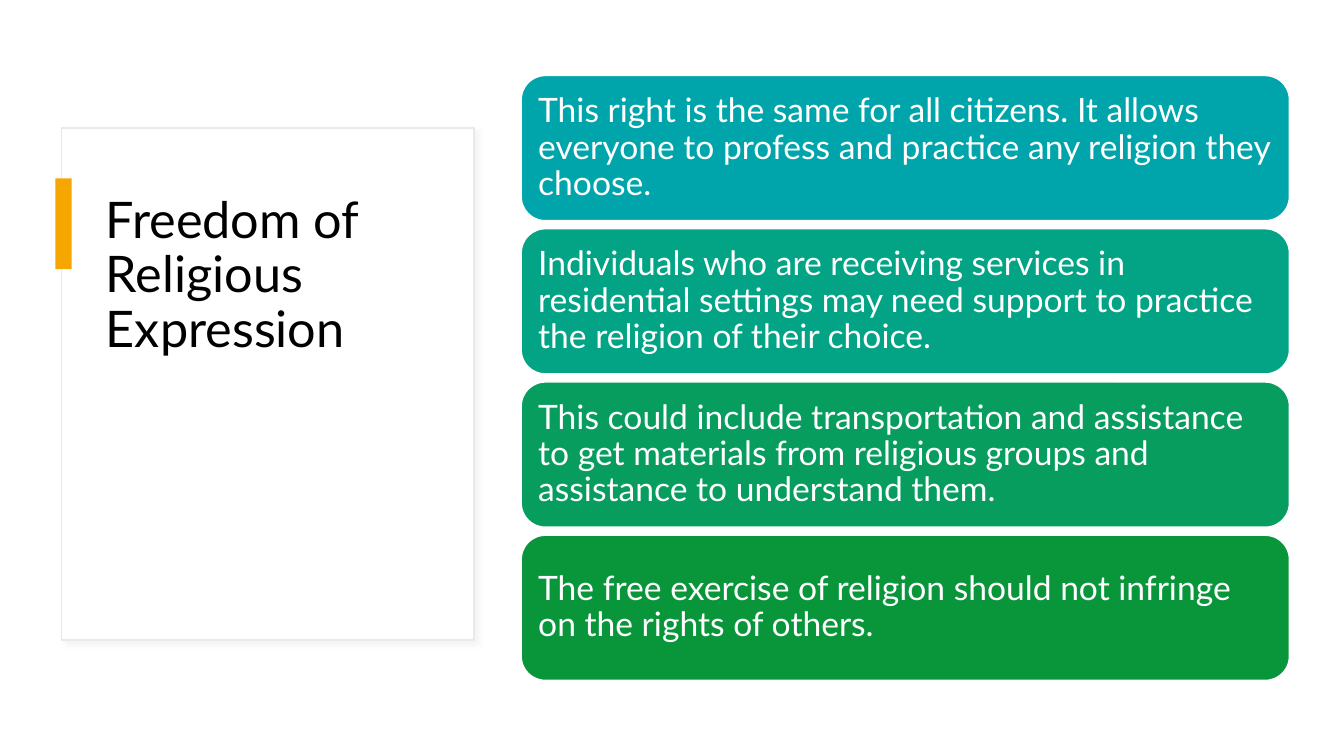
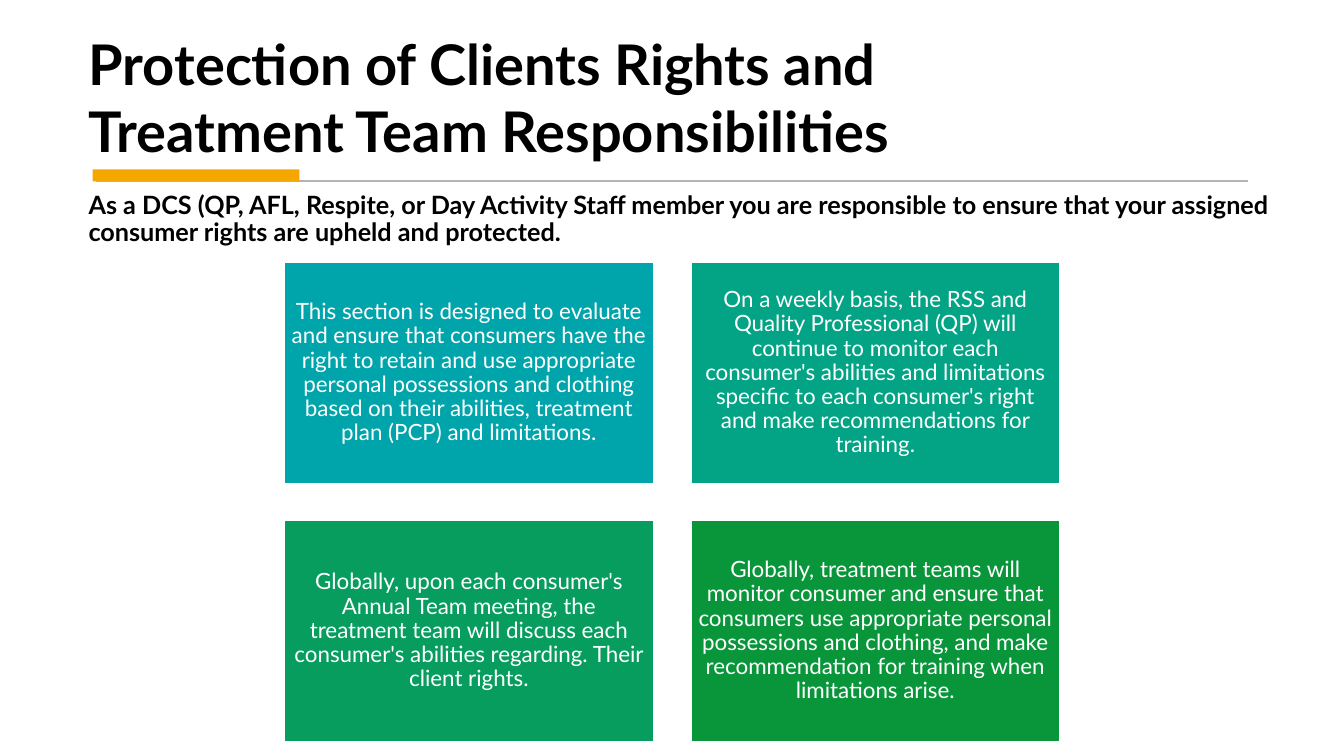
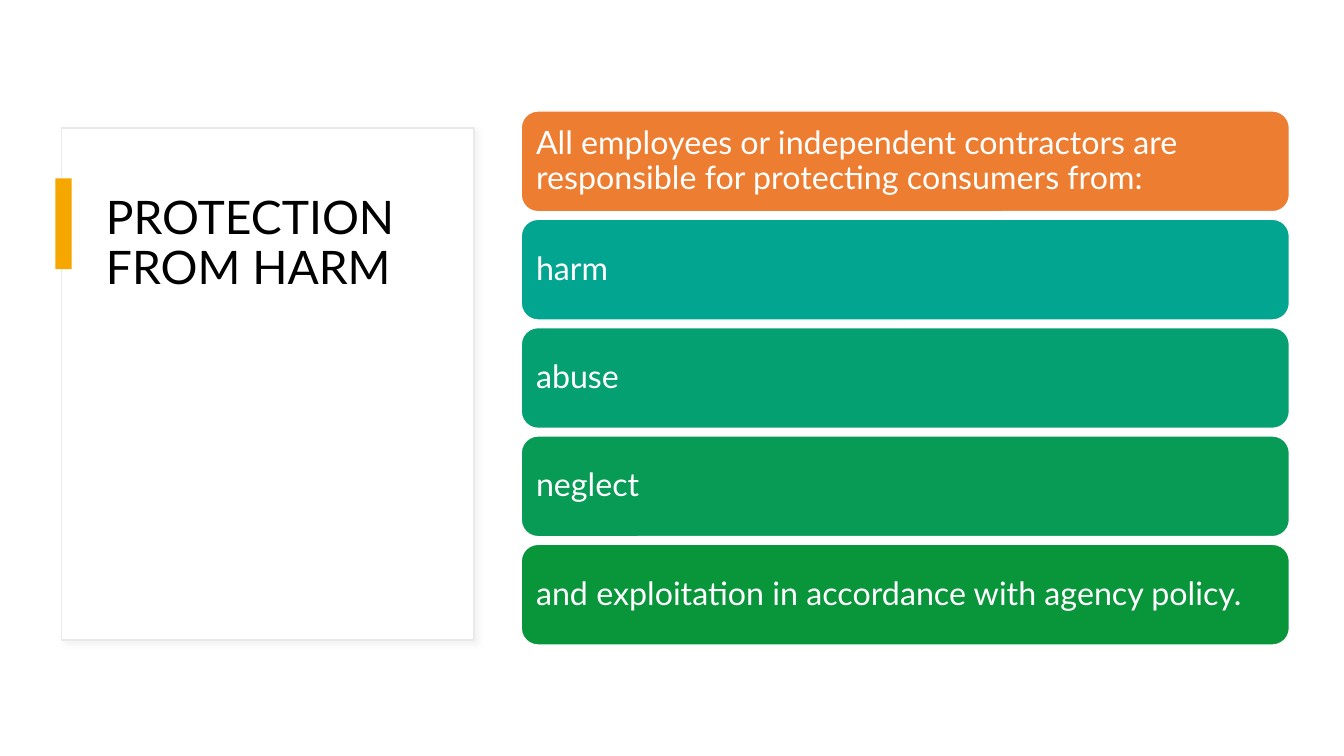
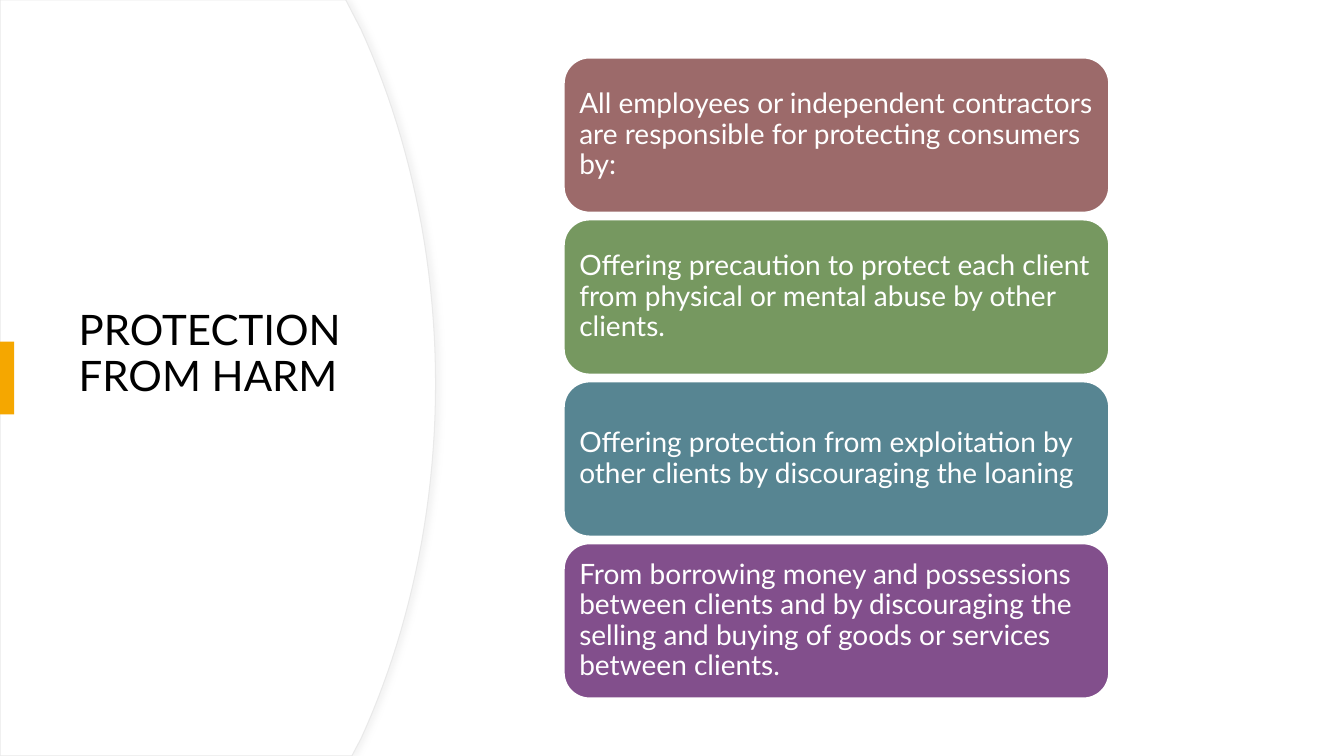
from lxml import etree
from pptx import Presentation
from pptx.dml.color import RGBColor
from pptx.enum.shapes import MSO_CONNECTOR as CONNECTOR, MSO_SHAPE as SHAPE
from pptx.enum.text import MSO_ANCHOR as ANCHOR, MSO_AUTO_SIZE as FIT, PP_ALIGN as ALIGN
from pptx.oxml.ns import qn
from pptx.util import Inches, Pt

# Shared look
FONT = "Lato"
BLACK, WHITE, ACCENT, EDGE, RULE = "000000", "FFFFFF", "F5A700", "E9E9E9", "B4B4B4"
TEAL_TO_GREEN = ["00A5AB", "03A485", "069D5E", "09963B"]

deck = Presentation()
deck.slide_width, deck.slide_height = Inches(13.33), Inches(7.5)
title_only = deck.slide_layouts[5]

# Grid of 100 columns and 100 rows; a place is column, row, columns, rows
COL, ROW = deck.slide_width / 100, deck.slide_height / 100


def dress(shape, place=None, fill=None, line=None, width=1, shadow_angle=None):
    """Place a shape, colour it, and give it a soft shadow or none."""
    if place:
        col, row, cols, rows = place
        shape.left, shape.top = int(col * COL), int(row * ROW)
        shape.width, shape.height = int(cols * COL), int(rows * ROW)
    if fill:
        shape.fill.solid()
        shape.fill.fore_color.rgb = RGBColor.from_string(fill)
    if line:
        shape.line.color.rgb = RGBColor.from_string(line)
        shape.line.width = Pt(width)
    elif fill:
        shape.line.fill.background()
    effects = etree.SubElement(shape.element.spPr, qn("a:effectLst"))
    if shadow_angle is not None:
        shadow = etree.SubElement(effects, qn("a:outerShdw"), blurRad=str(Pt(4)),
                                  dist=str(Pt(3)), dir=str(shadow_angle * 60000))
        color = etree.SubElement(shadow, qn("a:srgbClr"), val="D9D9D9")
        etree.SubElement(color, qn("a:alpha"), val="30000")
    return shape


def write(box, text, size, color=BLACK, bold=False, align=ALIGN.LEFT,
          anchor=ANCHOR.TOP, spacing=0.9, inset=None):
    frame = box.text_frame
    frame.word_wrap, frame.auto_size, frame.vertical_anchor = True, FIT.NONE, anchor
    if inset is not None:
        frame.margin_left = frame.margin_right = Inches(inset)
        frame.margin_top = frame.margin_bottom = Inches(inset)
    para = frame.paragraphs[0]
    para.alignment, para.line_spacing = align, spacing
    span = para.add_run()
    span.text = text
    span.font.name, span.font.size, span.font.bold = FONT, Pt(size), bold
    span.font.color.rgb = RGBColor.from_string(color)


# Three slides with a title on the left and a stack of cards on the right
panel_look = dict(title_place=(7.13, 25.07, 25.43, 51.33), title_anchor=ANCHOR.TOP,
                  accent=(4.13, 23.6, 1.2, 12), left=38.78, cols=57.16,
                  border=1, inset=0.1)
arc_look = dict(title_place=(5.1, 16.93, 23.86, 60), title_anchor=ANCHOR.MIDDLE,
                accent=(0, 45.2, 1.05, 9.6), left=41.94, cols=40.59,
                border=1.5, inset=0.08)
stacks = [
    dict(panel_look, title="Freedom of Religious Expression", title_size=36,
         size=24, rows=19.2, gap=1.07, colors=TEAL_TO_GREEN, cards=[
             "This right is the same for all citizens. It allows everyone to profess and practice any religion they choose.",
             "Individuals who are receiving services in residential settings may need support to practice the religion of their choice.",
             "This could include transportation and assistance to get materials from religious groups and assistance to understand them.",
             "The free exercise of religion should not infringe on the rights of others."]),
    dict(panel_look, title="PROTECTION FROM HARM", title_size=33,
         size=23, rows=13.33, gap=1,
         colors=["ED7D31", "02A690", "05A071", "079B55", "09963B"], cards=[
             "All employees or independent contractors are responsible for protecting consumers from:",
             "harm", "abuse", "neglect",
             "and exploitation in accordance with agency policy."]),
    dict(arc_look, title="PROTECTION FROM HARM", title_size=30,
         size=20, rows=20.53, gap=0.89,
         colors=["9C6A6A", "769860", "578592", "824F8C"], cards=[
             "All employees or independent contractors are responsible for protecting consumers by:",
             "Offering precaution to protect each client from physical or mental abuse by other clients.",
             "Offering protection from exploitation by other clients by discouraging the loaning",
             "From borrowing money and possessions between clients and by discouraging the selling and buying of goods or services between clients."]),
]

pages = [deck.slides.add_slide(title_only) for _ in range(4)]
religion_page, team_page, harm_page, precaution_page = pages

for page, stack in zip([religion_page, harm_page, precaution_page], stacks):
    shapes = page.shapes

    # Title and its accent bar
    title = dress(shapes.title, stack["title_place"])
    write(title, stack["title"], stack["title_size"], anchor=stack["title_anchor"])
    dress(shapes.add_shape(SHAPE.RECTANGLE, 0, 0, 0, 0), stack["accent"], ACCENT)

    # Cards, centred on the slide's height
    count, step = len(stack["cards"]), stack["rows"] + stack["gap"]
    top = (100 - count * step + stack["gap"]) / 2
    for index, (text, color) in enumerate(zip(stack["cards"], stack["colors"])):
        card = shapes.add_shape(SHAPE.ROUNDED_RECTANGLE, 0, 0, 0, 0)
        place = (stack["left"], top + index * step, stack["cols"], stack["rows"])
        dress(card, place, color, WHITE, stack["border"])
        write(card, text, stack["size"], WHITE, anchor=ANCHOR.MIDDLE, inset=stack["inset"])

# Framed panel behind the title
for page in (religion_page, harm_page):
    panel = page.shapes.add_shape(SHAPE.RECTANGLE, 0, 0, 0, 0)
    dress(panel, (4.58, 16.93, 30.68, 67.73), WHITE, EDGE, shadow_angle=45)
    page.shapes.element.insert(2, panel.element)

# Curved panel behind the title: a Bezier arc and its mirror below the axis
AXIS, STEPS = 50.8, 24
arc = [(26.86, 3.87), (30.31, 17.33), (32.41, 33.47), (32.41, AXIS)]
upper = []
for step in range(STEPS + 1):
    t = step / STEPS
    weights = [(1 - t) ** 3, 3 * t * (1 - t) ** 2, 3 * t ** 2 * (1 - t), t ** 3]
    upper.append([sum(w * point[k] for w, point in zip(weights, arc)) for k in (0, 1)])
lower = [(x, 2 * AXIS - y) for x, y in reversed(upper[:-1])]
outline = [(25.73, 0), *upper, *lower, (26.18, 100), (0, 100)]
builder = precaution_page.shapes.build_freeform(0, 0)
builder.add_line_segments([(int(x * COL), int(y * ROW)) for x, y in outline], close=True)
curve = dress(builder.convert_to_shape(), None, WHITE, EDGE, 0.75, shadow_angle=0)
precaution_page.shapes.element.insert(2, curve.element)

# Treatment team: heading, rule and lead sentence
shapes = team_page.shapes
heading = dress(shapes.title, (5.85, 3.2, 74.12, 19.33))
write(heading, "Protection of Clients Rights and Treatment Team Responsibilities",
      40, bold=True, spacing=1.0)
rule = shapes.add_connector(CONNECTOR.STRAIGHT, 0, 0, 0, 0)
dress(rule, (7.13, 23.93, 85.75, 0), line=RULE, width=1.25)
dress(shapes.add_shape(SHAPE.RECTANGLE, 0, 0, 0, 0), (6.9, 22.4, 15.38, 1.6), ACCENT)
lead = dress(shapes.add_textbox(0, 0, 0, 0), (5.85, 18.53, 92.87, 14.8))
write(lead, "As a DCS (QP, AFL, Respite, or Day Activity Staff member you are responsible to ensure that your assigned consumer rights are upheld and protected.",
      18, bold=True, anchor=ANCHOR.BOTTOM)

# Treatment team: two by two cards
duties = [
    "This section is designed to evaluate and ensure that consumers have the right to retain and use appropriate personal possessions and clothing based on their abilities, treatment plan (PCP) and limitations.",
    "On a weekly basis, the RSS and Quality Professional (QP) will continue to monitor each consumer's abilities and limitations specific to each consumer's right and make recommendations for training.",
    "Globally, upon each consumer's Annual Team meeting, the treatment team will discuss each consumer's abilities regarding. Their client rights.",
    "Globally, treatment teams will monitor consumer and ensure that consumers use appropriate personal possessions and clothing, and make recommendation for training when limitations arise.",
]
CARD_COLS, CARD_ROWS, GAP_COLS, GAP_ROWS = 27.46, 29.33, 2.78, 4.8
for index, (text, color) in enumerate(zip(duties, TEAL_TO_GREEN)):
    row, col = divmod(index, 2)
    place = (21.16 + col * (CARD_COLS + GAP_COLS), 34.67 + row * (CARD_ROWS + GAP_ROWS),
             CARD_COLS, CARD_ROWS)
    card = dress(shapes.add_shape(SHAPE.RECTANGLE, 0, 0, 0, 0), place, color, WHITE)
    write(card, text, 16, WHITE, align=ALIGN.CENTER, anchor=ANCHOR.MIDDLE, inset=0.07)

deck.save("out.pptx")
